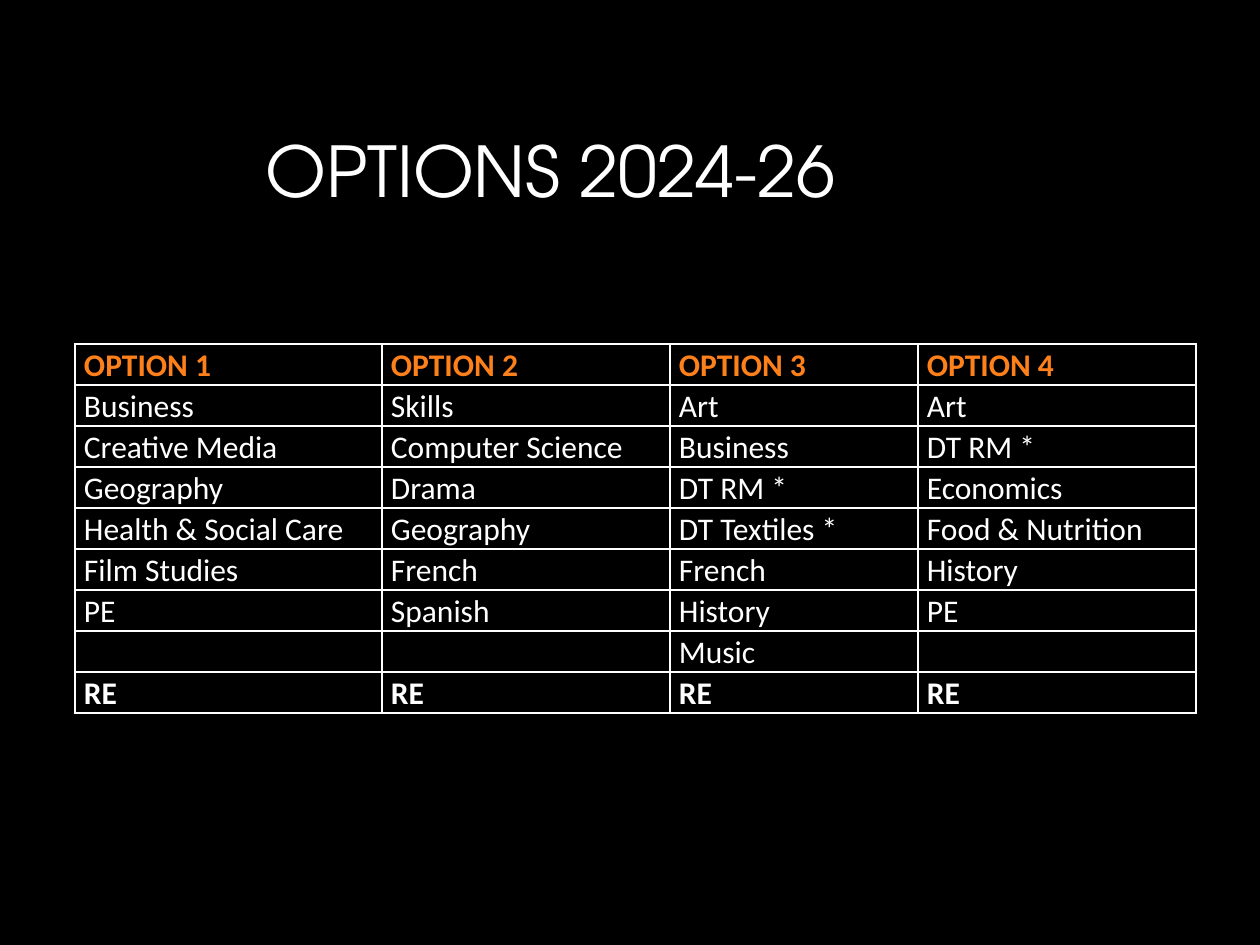
from dataclasses import dataclass

from lxml import etree
from pptx import Presentation
from pptx import util as u
from pptx.dml.color import RGBColor
from pptx.enum import text
from pptx.oxml.ns import qn

PX = u.Inches(1) / 126


def px(length):
    return u.Emu(round(length * PX))


@dataclass(frozen=True)
class Theme:
    background: str = "000000"
    body: str = "FFFFFF"
    heading: str = "FE801A"
    border: str = "FFFFFF"
    title_font: str = "TeX Gyre Adventor"
    body_font: str = "Calibri"
    title_size: int = 40
    body_size: int = 18


def write(frame, words, *, font, size, color, bold=False, spacing=1.0, after=0):
    paragraph = frame.paragraphs[0]
    paragraph.line_spacing = spacing
    paragraph.space_after = u.Pt(after)
    run = paragraph.add_run()
    run.text = words
    run.font.name = font
    run.font.size = u.Pt(size)
    run.font.bold = bold
    run.font.color.rgb = RGBColor.from_string(color)


def outline(cell, color):
    """Draw a one-point line on all four sides of a cell."""
    properties = cell._tc.get_or_add_tcPr()
    for place, side in enumerate(("lnL", "lnR", "lnT", "lnB")):
        line = etree.Element(qn(f"a:{side}"), w=str(u.Pt(1)))
        fill = etree.SubElement(line, qn("a:solidFill"))
        etree.SubElement(fill, qn("a:srgbClr"), val=color)
        properties.insert(place, line)


class SlideBuilder:
    def __init__(self, slide, theme):
        self.slide = slide
        self.theme = theme
        fill = slide.background.fill
        fill.solid()
        fill.fore_color.rgb = RGBColor.from_string(theme.background)

    def title(self, words, left, top, width, height):
        frame = self.slide.shapes.add_textbox(
            px(left), px(top), px(width), px(height)).text_frame
        frame.word_wrap = True
        frame.vertical_anchor = text.MSO_ANCHOR.MIDDLE
        write(frame, words, font=self.theme.title_font,
              size=self.theme.title_size, color=self.theme.body, spacing=0.9)

    def table(self, rows, left, top, widths, row_height):
        table = self.slide.shapes.add_table(
            len(rows), len(widths), px(left), px(top),
            px(sum(widths)), px(row_height * len(rows))).table
        for column, width in zip(table.columns, widths):
            column.width = px(width)
        for r, subjects in enumerate(rows):
            table.rows[r].height = px(row_height)
            for c, subject in enumerate(subjects):
                self.cell(table.cell(r, c), subject, header=r == 0,
                          bold=r in (0, len(rows) - 1))

    def cell(self, cell, words, header, bold):
        theme = self.theme
        cell.margin_left = cell.margin_right = px(9)
        cell.margin_top = cell.margin_bottom = 0
        cell.vertical_anchor = (
            text.MSO_ANCHOR.TOP if header else text.MSO_ANCHOR.MIDDLE)
        cell.fill.background()
        outline(cell, theme.border)
        if words:
            write(cell.text_frame, words, font=theme.body_font,
                  size=theme.body_size, bold=bold, spacing=1.07, after=8,
                  color=theme.heading if header else theme.body)


OPTIONS = [
    [f"OPTION {number}" for number in range(1, 5)],
    ["Business", "Skills", "Art", "Art"],
    ["Creative Media", "Computer Science", "Business", "DT RM *"],
    ["Geography", "Drama", "DT RM *", "Economics"],
    ["Health & Social Care", "Geography", "DT Textiles *", "Food & Nutrition"],
    ["Film Studies", "French", "French", "History"],
    ["PE", "Spanish", "History", "PE"],
    ["", "", "Music", ""],
    ["RE"] * 4,
]


def main():
    deck = Presentation()
    deck.slide_width, deck.slide_height = px(1260), px(945)
    builder = SlideBuilder(deck.slides.add_slide(deck.slide_layouts[6]), Theme())

    # Heading
    builder.title("OPTIONS 2024-26", 253, 96, 853, 157)

    # Subjects in each option block
    builder.table(OPTIONS, 75, 344, widths=(307, 288, 248, 278), row_height=41)

    deck.save("out.pptx")


if __name__ == "__main__":
    main()
